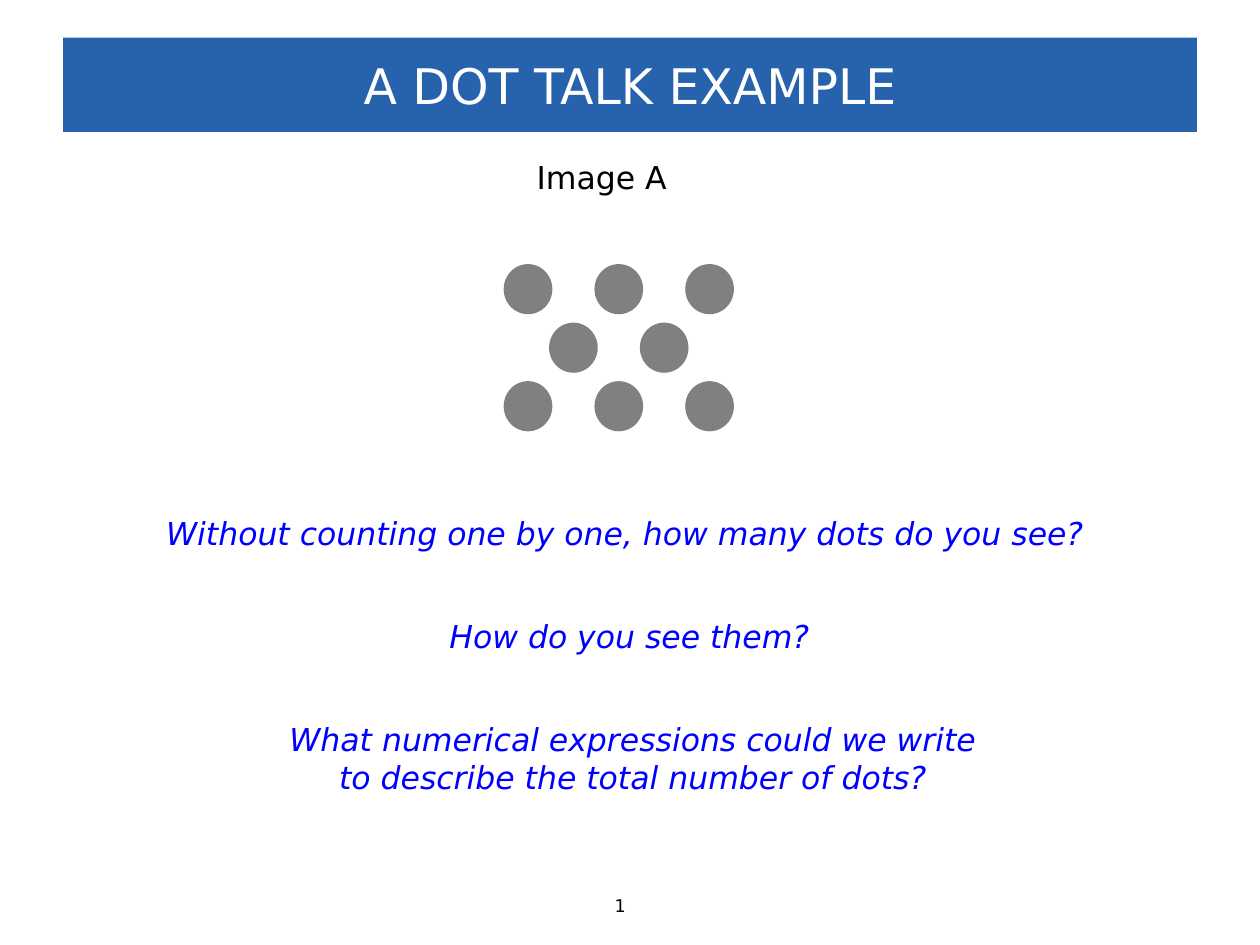
from pptx import Presentation
from pptx.dml.color import RGBColor
from pptx.enum import shapes, text
from pptx.util import Cm, Pt

BANNER_BLUE = RGBColor(0x27, 0x62, 0xAD)
QUESTION_BLUE = RGBColor(0x00, 0x00, 0xFF)
DOT_GRAY = RGBColor(0x80, 0x80, 0x80)
BLACK = RGBColor(0x00, 0x00, 0x00)
WHITE = RGBColor(0xFF, 0xFF, 0xFF)


def write(frame, words, size=18, color=BLACK, italic=False, align=None, wrap=False,
          autosize=text.MSO_AUTO_SIZE.SHAPE_TO_FIT_TEXT):
    frame.word_wrap = wrap
    frame.auto_size = autosize
    line = frame.paragraphs[0]
    line.alignment = align
    run = line.add_run()
    run.text = words
    run.font.name = "DejaVu Sans"
    run.font.size = Pt(size)
    run.font.italic = italic
    run.font.color.rgb = color


deck = Presentation()
deck.slide_width, deck.slide_height = Cm(25.4), Cm(19.05)
slide = deck.slides.add_slide(deck.slide_layouts[5])

banner = slide.shapes.title
banner.left, banner.top, banner.width, banner.height = Cm(1.27), Cm(0.76), Cm(22.86), Cm(1.9)
banner.fill.solid()
banner.fill.fore_color.rgb = BANNER_BLUE
banner.text_frame.vertical_anchor = text.MSO_ANCHOR.MIDDLE
write(banner.text_frame, "A DOT TALK EXAMPLE", size=28, color=WHITE,
      align=text.PP_ALIGN.CENTER, wrap=True, autosize=text.MSO_AUTO_SIZE.NONE)

question = dict(color=QUESTION_BLUE, italic=True)
captions = [
    ("1", 12.14, 17.91, 1.12, 0.68, dict(size=10)),
    ("Without counting one by one, how many dots do you see?", 3.1, 10.24, 19.33, 1.03, question),
    ("How do you see them?", 8.81, 12.32, 7.9, 1.03, question),
    ("What numerical expressions could we write to describe the total number of dots?",
     5.28, 14.4, 14.96, 1.8, dict(question, align=text.PP_ALIGN.CENTER, wrap=True)),
    ("Image A", 10.57, 3.07, 3.23, 1.03, {}),
]
for words, left, top, width, height, style in captions:
    caption = slide.shapes.add_textbox(Cm(left), Cm(top), Cm(width), Cm(height))
    write(caption.text_frame, words, **style)

dot_width, dot_height = 0.91, 0.94
column_step, row_step = 1.83, 1.18
dots = slide.shapes.add_group_shape()
for row, (count, indent) in enumerate([(3, 0), (2, column_step / 2), (3, 0)]):
    for column in range(count):
        dot = dots.shapes.add_shape(
            shapes.MSO_SHAPE.OVAL,
            Cm(10.19 + indent + column * column_step), Cm(5.36 + row * row_step),
            Cm(dot_width), Cm(dot_height))
        dot.shadow.inherit = False
        dot.fill.solid()
        dot.fill.fore_color.rgb = DOT_GRAY
        dot.line.color.rgb = DOT_GRAY
        dot.line.width = Pt(2)

deck.save("out.pptx")
